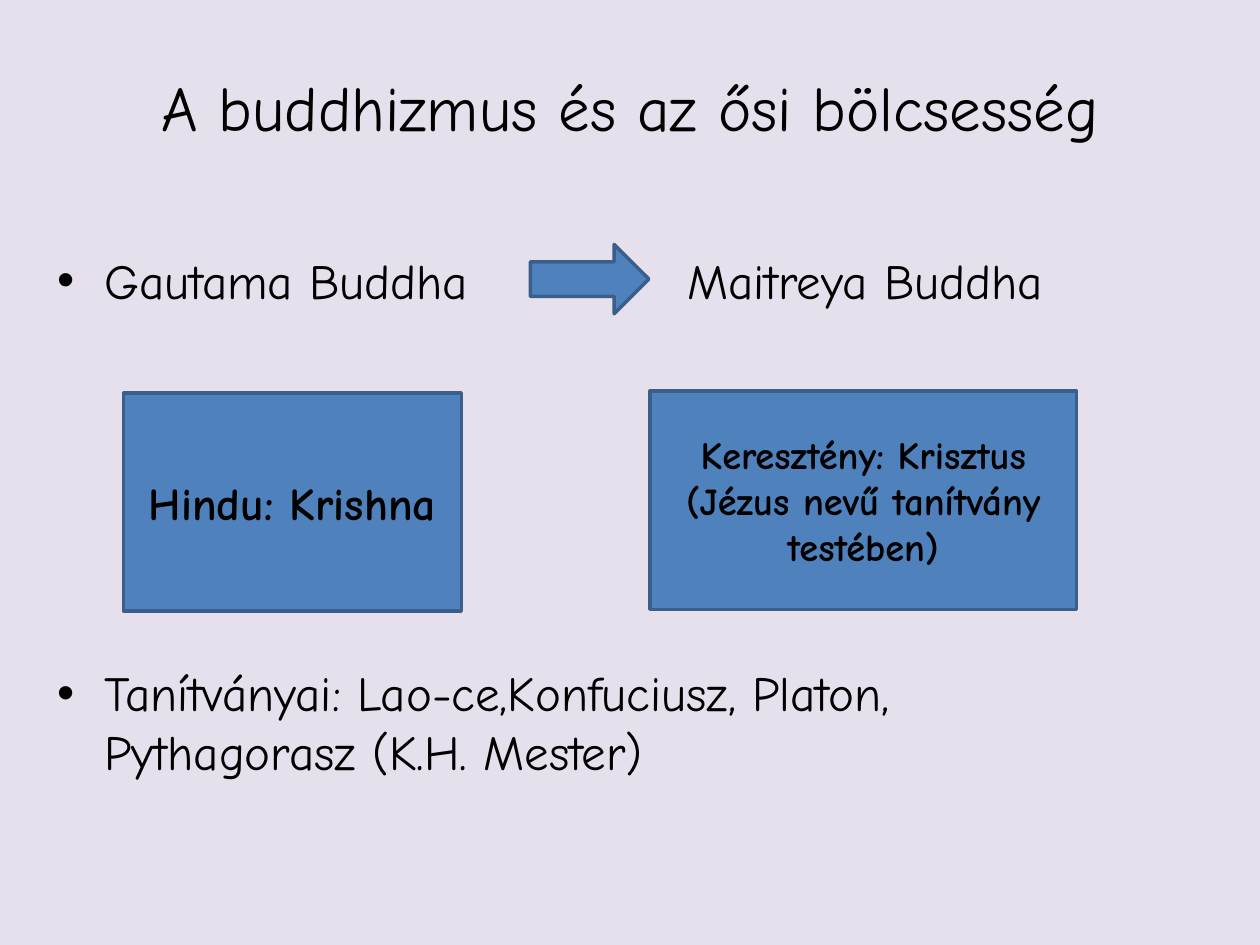
from lxml import etree
from pptx import Presentation
from pptx.dml.color import RGBColor
from pptx.enum.shapes import MSO_SHAPE
from pptx.enum.text import MSO_ANCHOR, PP_ALIGN
from pptx.oxml.ns import qn
from pptx.util import Pt

BACKGROUND = RGBColor(0xE6, 0xE0, 0xEC)
BLUE = RGBColor(0x4F, 0x81, 0xBD)
DARK_BLUE = RGBColor(0x3A, 0x5F, 0x8C)
BLACK = RGBColor(0, 0, 0)
FONT = "Comic Neue"
BULLET_FONT = "Arial"
ARROW = MSO_SHAPE.RIGHT_ARROW
RECTANGLE = MSO_SHAPE.RECTANGLE
CENTER = PP_ALIGN.CENTER
LEFT = PP_ALIGN.LEFT
MIDDLE = MSO_ANCHOR.MIDDLE
TOP = MSO_ANCHOR.TOP

TITLE = "A buddhizmus és az ősi bölcsesség"
BUDDHAS = "Gautama Buddha \t\tMaitreya Buddha"
DISCIPLES = "Tanítványai: Lao-ce,Konfuciusz, Platon, Pythagorasz (K.H. Mester)"
BULLET_INDENT = 27
BULLET_GAP = 202
TAB_SIZE = 72


def to_points(lengths):
    return [Pt(length) for length in lengths]


def write_paragraph(paragraph, text, size, alignment, bold=False):
    paragraph.alignment = alignment
    run = paragraph.add_run()
    run.text = text
    font_format = {"name": FONT, "size": Pt(size), "bold": bold}
    for attribute, value in font_format.items():
        setattr(run.font, attribute, value)
    run.font.color.rgb = BLACK


def add_bullet(paragraph):
    properties = paragraph._p.get_or_add_pPr()
    bullet_format = {
        "marL": BULLET_INDENT,
        "indent": -BULLET_INDENT,
        "defTabSz": TAB_SIZE,
    }
    for attribute, length in bullet_format.items():
        properties.set(attribute, str(int(Pt(length))))
    etree.SubElement(properties, qn("a:buFont"), typeface=BULLET_FONT)
    etree.SubElement(properties, qn("a:buChar"), char="•")


def add_text_box(slide, bounds, anchor):
    text_frame = slide.shapes.add_textbox(*to_points(bounds)).text_frame
    frame_format = {"word_wrap": True, "vertical_anchor": anchor}
    for attribute, value in frame_format.items():
        setattr(text_frame, attribute, value)
    return text_frame


def add_title(slide):
    text_frame = add_text_box(slide, (36, 21.6, 648, 78.5), MIDDLE)
    write_paragraph(text_frame.paragraphs[0], TITLE, 36, CENTER)


def add_bullets(slide):
    text_frame = add_text_box(slide, (25.5, 139.7, 601.2, 351.4), TOP)
    buddhas = text_frame.paragraphs[0]
    disciples = text_frame.add_paragraph()
    disciples.space_before = Pt(BULLET_GAP)
    for paragraph, text in ((buddhas, BUDDHAS), (disciples, DISCIPLES)):
        write_paragraph(paragraph, text, 28, LEFT)
        add_bullet(paragraph)


def add_blue_shape(slide, kind, bounds):
    shape = slide.shapes.add_shape(kind, *to_points(bounds))
    shape.shadow.inherit = False
    shape.fill.solid()
    shape.fill.fore_color.rgb = BLUE
    shape.line.color.rgb = DARK_BLUE
    shape.line.width = Pt(2)
    return shape


def add_name_box(slide, bounds, text, size):
    text_frame = add_blue_shape(slide, RECTANGLE, bounds).text_frame
    text_frame.word_wrap = True
    text_frame.vertical_anchor = MIDDLE
    write_paragraph(text_frame.paragraphs[0], text, size, CENTER, bold=True)


def main():
    presentation = Presentation()
    presentation.slide_width, presentation.slide_height = Pt(720), Pt(540)
    slide = presentation.slides.add_slide(presentation.slide_layouts[6])
    slide.background.fill.solid()
    slide.background.fill.fore_color.rgb = BACKGROUND

    add_title(slide)
    add_bullets(slide)
    add_blue_shape(slide, ARROW, (303.1, 139.7, 67.7, 39.6))
    add_name_box(slide, (70.6, 224.6, 193, 124.6), "Hindu: Krishna", 26)
    add_name_box(
        slide,
        (371.3, 223.6, 244, 124.6),
        "Keresztény: Krisztus (Jézus nevű tanítvány testében)",
        22,
    )
    presentation.save("out.pptx")


if __name__ == "__main__":
    main()
